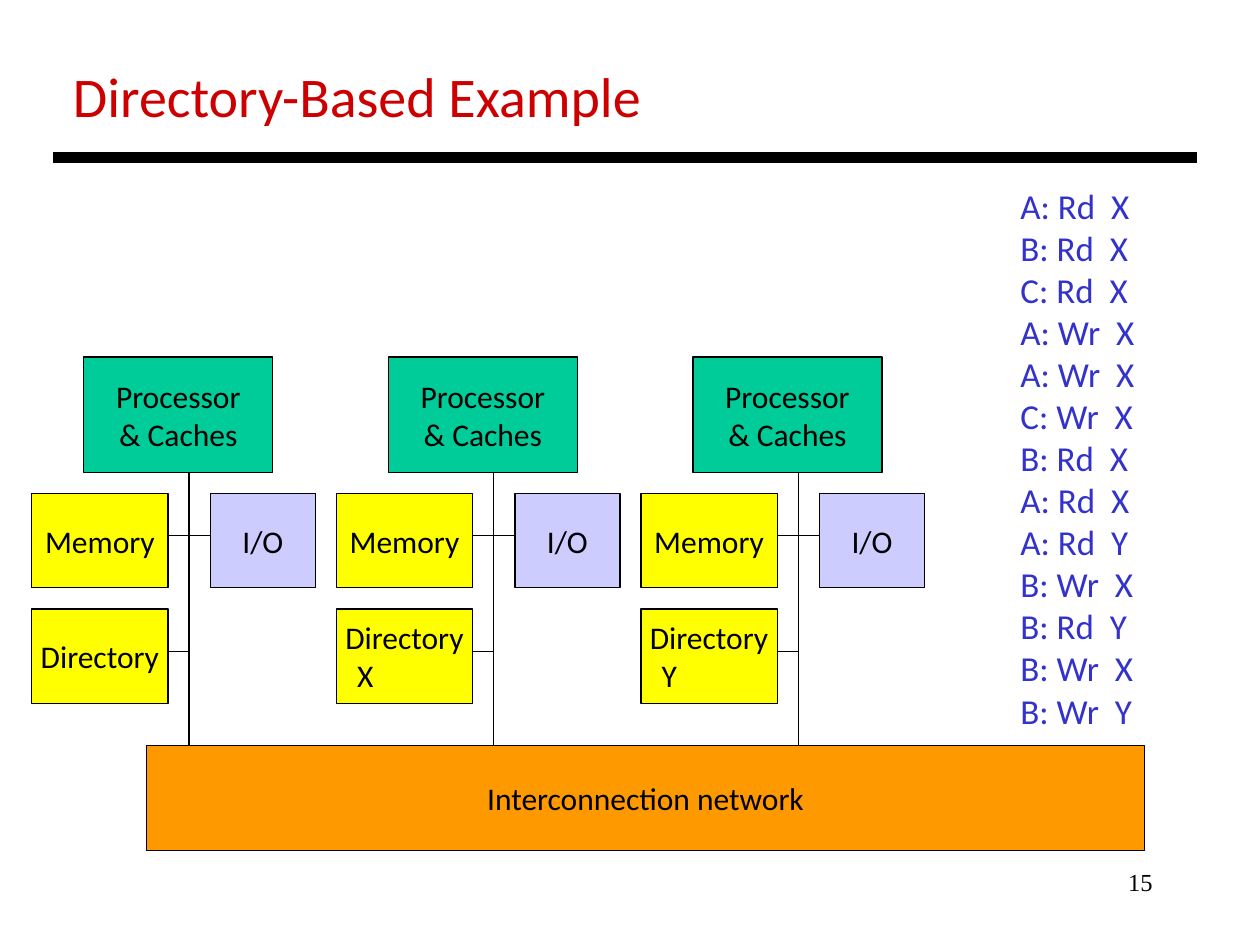
from lxml.etree import SubElement
from pptx import Presentation
from pptx.dml.color import RGBColor
from pptx.enum.shapes import MSO_CONNECTOR, MSO_SHAPE
from pptx.enum.text import MSO_ANCHOR, MSO_AUTO_SIZE, PP_ALIGN
from pptx.oxml.ns import qn
from pptx.util import Cm, Pt

TITLE = "Directory-Based Example"
PAGE_NUMBER = "15"
NETWORK = "Interconnection network"
DIRECTORY_ENTRIES = ["", "X", "Y"]  # one node for each
OPERATIONS = [
    "A: Rd  X", "B: Rd  X", "C: Rd  X", "A: Wr  X", "A: Wr  X", "C: Wr  X", "B: Rd  X",
    "A: Rd  X", "A: Rd  Y", "B: Wr  X", "B: Rd  Y", "B: Wr  X", "B: Wr  Y",
]

BLACK, RED, BLUE = "000000", "CC0000", "3333CC"
GREEN, YELLOW, LILAC, ORANGE = "00CC99", "FFFF00", "CCCCFF", "FF9900"

# Lengths in centimetres; x values in a node count from its left edge
NODE_LEFT, NODE_PITCH = 0.64, 6.14
BUS_X = 3.17
MEMORY_WIDTH, IO_LEFT = 2.75, 3.6
PROCESSOR_TOP, PROCESSOR_HEIGHT = 7.2, 2.33
MEMORY_TOP, DIRECTORY_TOP, UNIT_HEIGHT = 9.95, 12.28, 1.9
LINK_DROP = 0.85
NETWORK_TOP = 15.03


def color(hex_code):
    return RGBColor.from_string(hex_code)


def write(shape, lines, size=18, ink=BLACK, font="Calibri",
          align=PP_ALIGN.CENTER, anchor=MSO_ANCHOR.MIDDLE, inset=0):
    """Fill a shape with one paragraph per line and return the paragraphs."""
    frame = shape.text_frame
    frame.text = "\n".join(lines)
    frame.word_wrap = True
    frame.auto_size = MSO_AUTO_SIZE.NONE
    frame.vertical_anchor = anchor
    frame.margin_left = frame.margin_right = Cm(inset)
    frame.margin_top = frame.margin_bottom = Cm(inset / 2)
    for paragraph in frame.paragraphs:
        paragraph.alignment = align
        paragraph.space_before = Pt(0)
        paragraph.font.size = Pt(size)
        paragraph.font.name = font
        paragraph.font.color.rgb = color(ink)
    return frame.paragraphs


def place(shape, left, top, width, height):
    shape.left, shape.top, shape.width, shape.height = map(Cm, (left, top, width, height))


def add_box(left, top, width, height, fill, lines):
    box = slide.shapes.add_shape(MSO_SHAPE.RECTANGLE, *map(Cm, (left, top, width, height)))
    box.shadow.inherit = False
    box.fill.solid()
    box.fill.fore_color.rgb = color(fill)
    box.line.color.rgb = color(BLACK)
    box.line.width = Pt(0.75)
    return write(box, lines)


def add_line(x1, y1, x2, y2, width=0.75):
    line = slide.shapes.add_connector(MSO_CONNECTOR.STRAIGHT, *map(Cm, (x1, y1, x2, y2)))
    line.line.color.rgb = color(BLACK)
    line.line.width = Pt(width)
    SubElement(line._element.spPr, qn("a:effectLst"))


def add_node(left, entry):
    """Draw a processor with its memory, I/O and directory around a bus."""
    bus = left + BUS_X
    memory_right = left + MEMORY_WIDTH
    add_box(left + 1.05, PROCESSOR_TOP, 3.81, PROCESSOR_HEIGHT, GREEN,
            ["Processor", "& Caches"])
    add_box(left, MEMORY_TOP, MEMORY_WIDTH, UNIT_HEIGHT, YELLOW, ["Memory"])
    add_box(left + IO_LEFT, MEMORY_TOP, 2.12, UNIT_HEIGHT, LILAC, ["I/O"])
    lines = ["Directory", entry] if entry else ["Directory"]
    paragraphs = add_box(left, DIRECTORY_TOP, MEMORY_WIDTH, UNIT_HEIGHT, YELLOW, lines)
    if entry:
        paragraphs[1].alignment = PP_ALIGN.LEFT
        paragraphs[1]._p.get_or_add_pPr().set("marL", str(Cm(0.42)))

    add_line(bus, PROCESSOR_TOP + PROCESSOR_HEIGHT, bus, NETWORK_TOP)
    for top, right in ((MEMORY_TOP, left + IO_LEFT), (DIRECTORY_TOP, bus)):
        add_line(memory_right, top + LINK_DROP, right, top + LINK_DROP)


presentation = Presentation()
presentation.slide_width, presentation.slide_height = Cm(25.4), Cm(19.05)
slide = presentation.slides.add_slide(presentation.slide_layouts[1])

title, operations = slide.placeholders
place(title, 1.22, 1.1, 20, 1.62)
write(title, [TITLE], size=32, ink=RED, align=PP_ALIGN.LEFT, inset=0.25)
add_line(1.06, 3.18, 24.13, 3.18, width=6)

for index, entry in enumerate(DIRECTORY_ENTRIES):
    add_node(NODE_LEFT + index * NODE_PITCH, entry)
add_box(2.96, NETWORK_TOP, 20.11, 2.12, ORANGE, [NETWORK])

place(operations, 20.32, 3.6, 3.2, 11.38)
for operation in write(operations, OPERATIONS, size=20, ink=BLUE, align=PP_ALIGN.LEFT,
                       anchor=MSO_ANCHOR.TOP, inset=0.25):
    properties = operation._p.get_or_add_pPr()
    properties.set("marL", "0")
    properties.set("indent", "0")
    bullet = properties.makeelement(qn("a:buNone"), {})
    properties.find(qn("a:defRPr")).addprevious(bullet)

page_number = slide.shapes.add_textbox(Cm(18.2), Cm(17.36), Cm(5.29), Cm(1.27))
write(page_number, [PAGE_NUMBER], size=14, font="Times New Roman",
      align=PP_ALIGN.RIGHT, anchor=MSO_ANCHOR.TOP, inset=0.25)

presentation.save("out.pptx")
